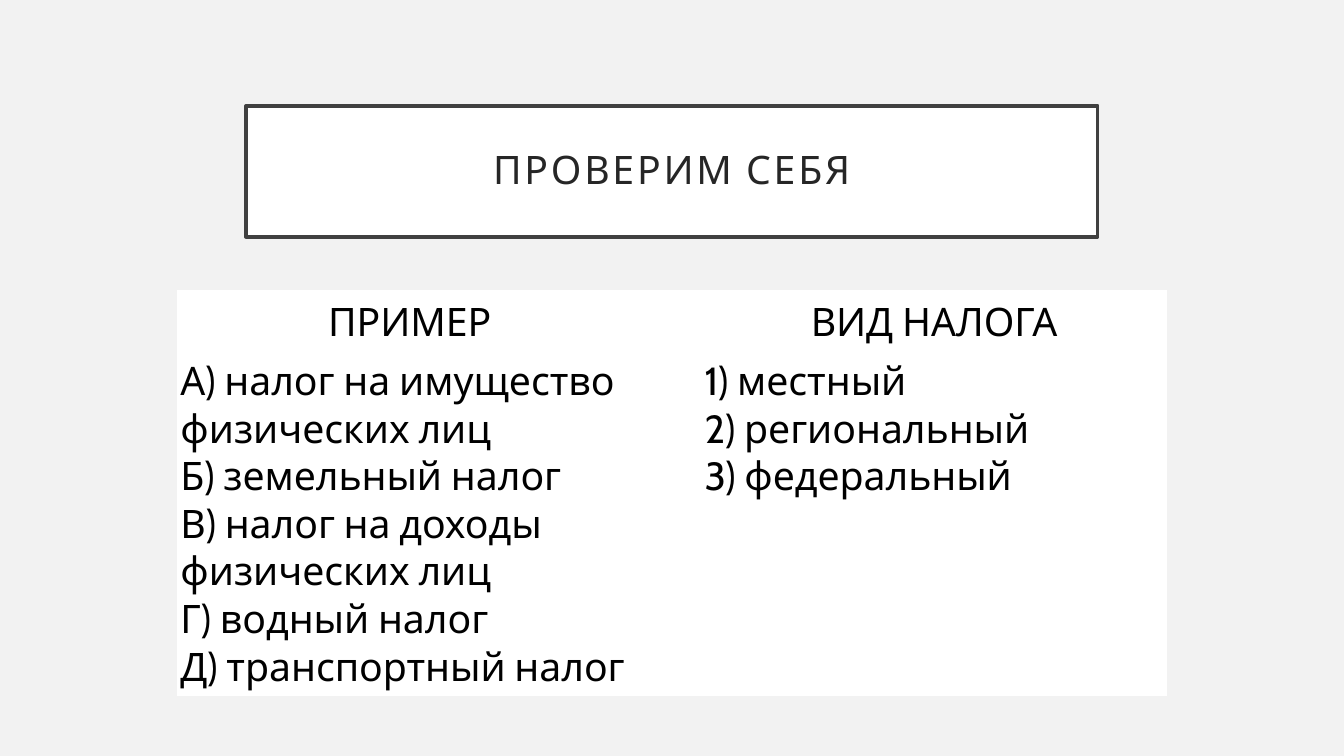
"""Build a quiz slide matching tax examples with tax types."""
import dataclasses

import pptx
import pptx.dml.color
import pptx.enum.text
import pptx.util

Pt = pptx.util.Pt
Align = pptx.enum.text.PP_ALIGN
Anchor = pptx.enum.text.MSO_ANCHOR


@dataclasses.dataclass(frozen=True)
class Theme:
    font: str = "Cabin"
    size: int = 28
    back: str = "F2F2F2"
    white: str = "FFFFFF"
    frame: str = "404040"
    head: str = "262626"
    text: str = "000000"


class Deck:
    def __init__(self, theme):
        self.theme = theme
        self.file = pptx.Presentation()
        self.file.slide_width, self.file.slide_height = Pt(960), Pt(540)
        self.slide = self.file.slides.add_slide(self.file.slide_layouts[5])
        self.paint(self.slide.background.fill, theme.back)

    def paint(self, fill, color):
        fill.solid()
        fill.fore_color.rgb = pptx.dml.color.RGBColor.from_string(color)

    def label(self, frame, lines, color, align):
        frame.text = "\n".join(lines)
        for para in frame.paragraphs:
            para.alignment = align
            para.font.name = self.theme.font
            para.font.size = Pt(self.theme.size)
            para.font.bold = False
            self.paint(para.font.fill, color)

    def title(self, text, left, top, width, height):
        box = self.slide.shapes.title
        box.left, box.top, box.width, box.height = map(Pt, (left, top, width, height))
        self.paint(box.fill, self.theme.white)
        self.paint(box.line.fill, self.theme.frame)
        box.line.width = Pt(2.5)
        frame = box.text_frame
        frame.word_wrap = True
        frame.vertical_anchor = Anchor.MIDDLE
        frame.margin_left = frame.margin_right = Pt(14.4)
        frame.margin_top = frame.margin_bottom = Pt(14.4)
        self.label(frame, [text], self.theme.head, Align.CENTER)
        para = frame.paragraphs[0]
        para.line_spacing = 0.9
        para.runs[0].font._element.set("spc", "200")

    def table(self, rows, left, top, widths, heights):
        area = map(Pt, (left, top, sum(widths), sum(heights)))
        grid = self.slide.shapes.add_table(len(rows), len(widths), *area).table
        grid.first_row = grid.horz_banding = False
        for col, width in zip(grid.columns, widths):
            col.width = Pt(width)
        for index, (row, height) in enumerate(zip(rows, heights)):
            grid.rows[index].height = Pt(height)
            for cell, lines in zip(grid.rows[index].cells, row):
                self.paint(cell.fill, self.theme.white)
                cell.margin_left = cell.margin_right = Pt(2.2)
                cell.margin_top = cell.margin_bottom = Pt(2.2)
                cell.vertical_anchor = Anchor.TOP if index else Anchor.MIDDLE
                align = Align.LEFT if index else Align.CENTER
                if lines:
                    self.label(cell.text_frame, lines, self.theme.text, align)


def main():
    deck = Deck(Theme())
    deck.title("ПРОВЕРИМ СЕБЯ", 175.7, 75.6, 608.4, 93.6)
    taxes = [
        "А) налог на имущество физических лиц",
        "Б) земельный налог",
        "В) налог на доходы физических лиц",
        "Г) водный налог",
        "Д) транспортный налог",
    ]
    kinds = ["1) местный", "2) региональный", "3) федеральный"]
    rows = [[["ПРИМЕР"], [], ["ВИД НАЛОГА"]], [taxes, [], kinds]]
    deck.table(rows, 126.7, 207.4, [332, 42.5, 332], [46, 243.2])
    deck.file.save("out.pptx")


if __name__ == "__main__":
    main()
